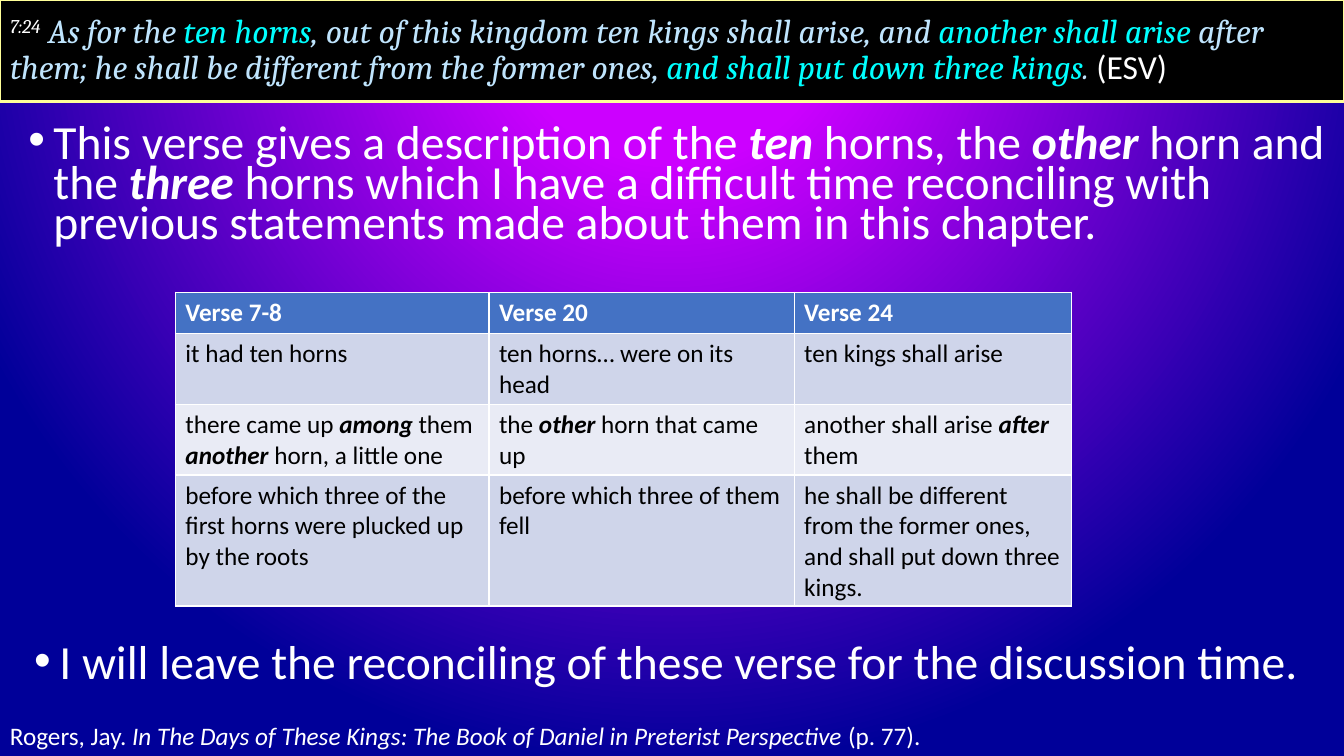
from lxml import etree
from pptx import Presentation
from pptx import util as u
from pptx.dml import color
from pptx.enum import text
from pptx.oxml import ns, parse_xml

Pt = u.Pt
COLORS = {
    "white": "FFFFFF", "black": "000000", "verse": "BFE4FD", "highlight": "00FFFF",
    "border": "FFFF99", "header": "4472C4", "odd": "CFD5EA", "even": "E9EBF5",
    "glow": "CC00FF", "deep": "000099",
}
VERSE = [
    ("As for the ", "verse"), ("ten horns", "highlight"),
    (", out of this kingdom ten kings shall arise, and ", "verse"),
    ("another shall arise ", "highlight"),
    ("after them; he shall be different from the former ones, ", "verse"),
    ("and shall put down three kings", "highlight"), (". ", "verse"),
]
# Text between asterisks is emphasised
DESCRIPTION = ("This verse gives a description of the *ten* horns, the *other* horn and the "
               "*three* horns which I have a difficult time reconciling with previous "
               "statements made about them in this chapter.")
CLOSING = "I will leave the reconciling of these verse for the discussion time."
SOURCE = ("Rogers, Jay. *In The Days of These Kings: The Book of Daniel in Preterist "
          "Perspective* (p. 77).")
COMPARISON = [
    ("Verse 7-8", "Verse 20", "Verse 24"),
    ("it had ten horns", "ten horns… were on its head", "ten kings shall arise"),
    ("there came up *among* them *another* horn, a little one",
     "the *other* horn that came up", "another shall arise *after* them"),
    ("before which three of the first horns were plucked up by the roots",
     "before which three of them fell",
     "he shall be different from the former ones, and shall put down three kings."),
]


def rgb(name):
    return color.RGBColor.from_string(COLORS[name])


def add_run(paragraph, words, ink="white", **formats):
    run = paragraph.add_run()
    run.text = words
    for key, value in ({"name": "Calibri", "bold": False, "italic": False} | formats).items():
        setattr(run.font, key, value)
    run.font.color.rgb = rgb(ink)
    return run


def add_marked(paragraph, marked, emphasis, **formats):
    for i, words in enumerate(marked.split("*")):
        add_run(paragraph, words, **(formats | (emphasis if i % 2 else {})))


def place(part, box):
    for key, value in zip(("left", "top", "width", "height"), box):
        setattr(part, key, Pt(value))


def paint_background(slide):
    stops = "".join(f'<a:gs pos="{pos}"><a:srgbClr val="{COLORS[name]}"/></a:gs>'
                    for pos, name in ((0, "glow"), (21000, "glow"), (100000, "deep")))
    slide._element.cSld.insert(0, parse_xml(
        f'<p:bg {ns.nsdecls("p", "a")}><p:bgPr><a:gradFill rotWithShape="1">'
        f'<a:gsLst>{stops}</a:gsLst><a:path path="circle">'
        '<a:fillToRect l="50000" t="-80000" r="50000" b="180000"/></a:path>'
        '</a:gradFill><a:effectLst/></p:bgPr></p:bg>'))


def verse_banner(banner, box):
    place(banner, box)
    banner.fill.solid()
    banner.fill.fore_color.rgb = rgb("black")
    banner.line.color.rgb = rgb("border")
    banner.line.width = Pt(2)
    frame = banner.text_frame
    frame.auto_size = text.MSO_AUTO_SIZE.NONE
    frame.vertical_anchor = text.MSO_ANCHOR.MIDDLE
    verse = frame.paragraphs[0]
    verse.alignment = text.PP_ALIGN.LEFT
    verse.line_spacing = 0.9
    scripture = {"name": "Cambria", "size": Pt(24), "italic": True}
    number = add_run(verse, "7:24", **scripture)
    number._r.get_or_add_rPr().set("baseline", "30000")
    add_run(verse, " ", "verse", **scripture)
    for words, ink in VERSE:
        add_run(verse, words, ink, **scripture)
    add_run(verse, "(ESV)", size=Pt(24))


def bullet_point(holder, box, marked, spacing):
    place(holder, box)
    frame = holder.text_frame
    frame.word_wrap = True
    frame.auto_size = text.MSO_AUTO_SIZE.NONE
    point = frame.paragraphs[0]
    props = point._p.get_or_add_pPr()
    props.set("marL", str(Pt(18)))
    props.set("indent", str(-Pt(18)))
    etree.SubElement(props, ns.qn("a:buFont")).set("typeface", "Arial")
    etree.SubElement(props, ns.qn("a:buChar")).set("char", "•")
    formats = {"alignment": text.PP_ALIGN.LEFT, "line_spacing": spacing, "space_before": Pt(0)}
    for key, value in formats.items():
        setattr(point, key, value)
    add_marked(point, marked, {"bold": True, "italic": True}, size=Pt(34))


def comparison_table(slide, box, widths, heights):
    table = slide.shapes.add_table(len(heights), len(widths), *map(Pt, box)).table
    for column, width in zip(table.columns, widths):
        column.width = Pt(width)
    for r, (row, height) in enumerate(zip(table.rows, heights)):
        row.height = Pt(height)
        band = "header" if r == 0 else "odd" if r % 2 else "even"
        for cell, marked in zip(row.cells, COMPARISON[r]):
            cell.fill.solid()
            cell.fill.fore_color.rgb = rgb(band)
            add_marked(cell.text_frame.paragraphs[0], marked, {"bold": True, "italic": True},
                       size=Pt(18), bold=r == 0, ink="black" if r else "white")


def source_line(slide, box):
    frame = slide.shapes.add_textbox(*map(Pt, box)).text_frame
    frame.word_wrap = True
    add_marked(frame.paragraphs[0], SOURCE, {"italic": True}, size=Pt(18))


def main():
    deck = Presentation()
    deck.slide_width, deck.slide_height = Pt(960), Pt(540)
    slide = deck.slides.add_slide(deck.slide_layouts[1])
    paint_background(slide)
    # Verse and first remark
    verse_banner(slide.shapes.title, (0, 0, 960, 72.7))
    bullet_point(slide.placeholders[1], (13, 87.8, 943, 97.2), DESCRIPTION, 0.7)
    # Citation, comparison and closing remark
    source_line(slide, (0, 511.2, 960, 28.8))
    comparison_table(slide, (125.3, 208.8, 640, 224), (224, 218, 198), (29.5, 50.5, 50.5, 93.5))
    closing_box = (17.3, 455.8, 943, 59)
    bullet_point(slide.shapes.add_textbox(*map(Pt, closing_box)), closing_box, CLOSING, 0.8)
    deck.save("out.pptx")


if __name__ == "__main__":
    main()
